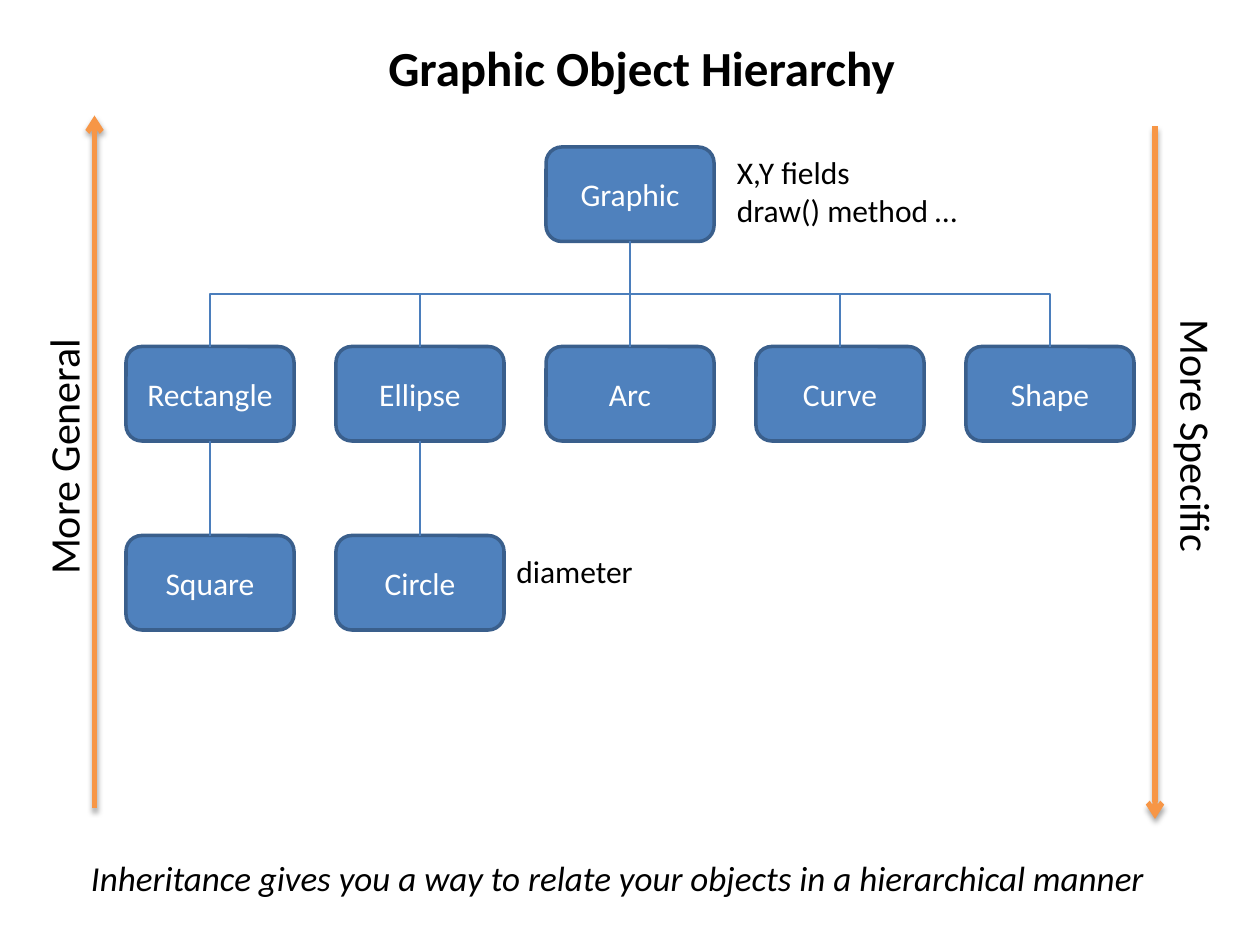
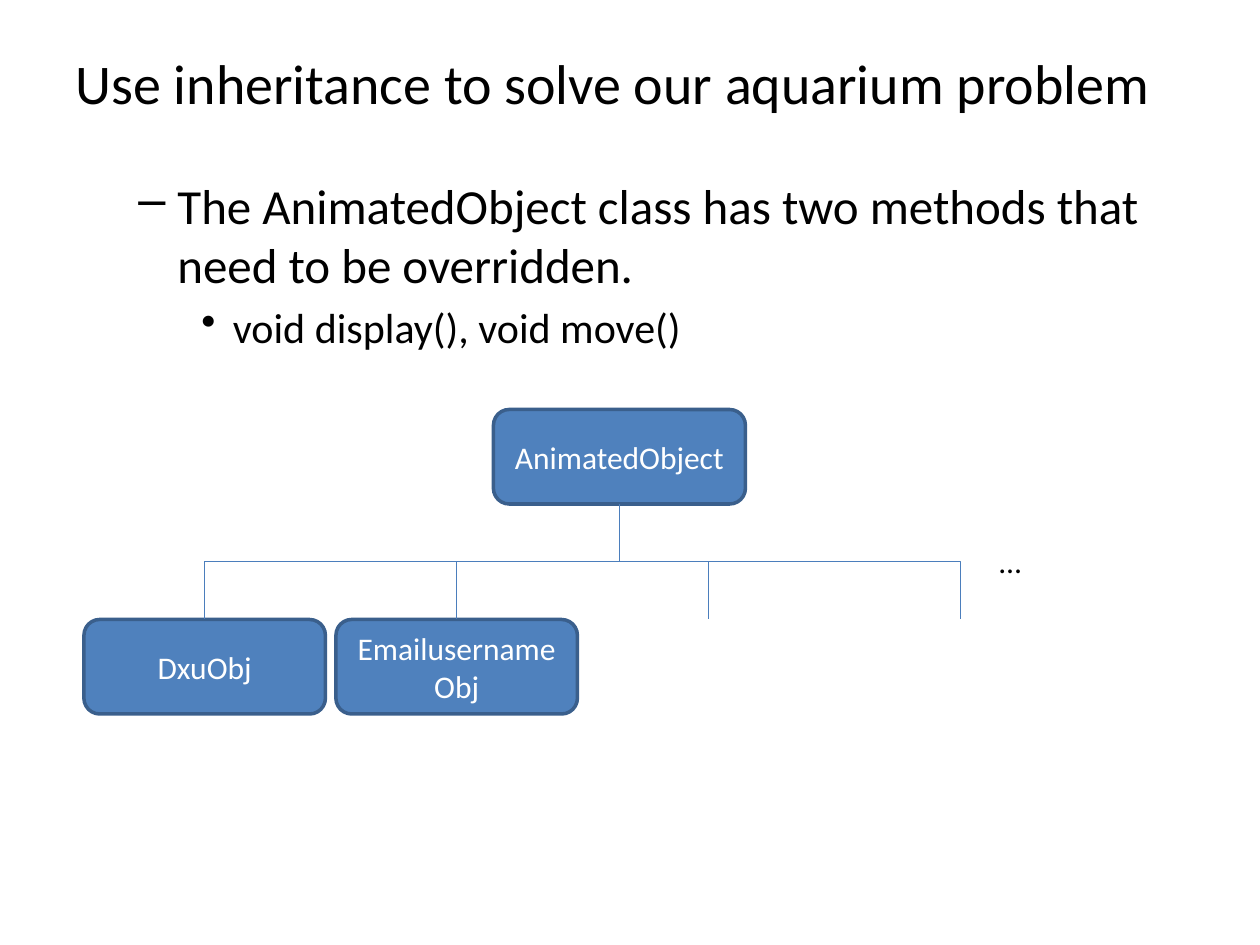
from pptx import Presentation
from pptx.dml.color import RGBColor
from pptx.enum.shapes import MSO_CONNECTOR as Link, MSO_SHAPE as Preset
from pptx.enum.text import MSO_ANCHOR as Anchor, MSO_AUTO_SIZE as Fit, PP_ALIGN as Align
from pptx.oxml.ns import qn
from pptx.util import Inches, Pt
from lxml.etree import SubElement

TITLE_ONLY = 5
COLS, ROWS = 120, 90  # twelve grid units to the inch
BOTTOM, TOP = 2, 0    # connection sites of a box


def rgb(code):
    return RGBColor.from_string(code)


def write(p, text, size=18, color="000000", bold=False, italic=False,
          align=Align.LEFT, font="Calibri"):
    """Add one formatted run to a paragraph."""
    p.alignment = align
    r = p.add_run()
    r.text = text
    r.font.name, r.font.size = font, Pt(size)
    r.font.bold, r.font.italic = bold, italic
    r.font.color.rgb = rgb(color)


class Deck:
    fill, edge, link, accent = "4F81BD", "3A5F8C", "4B7EBC", "F79646"

    def __init__(self):
        self.prs = Presentation()
        self.prs.slide_width, self.prs.slide_height = Inches(10), Inches(7.5)
        self.s = None

    def x(self, cols):
        return round(self.prs.slide_width * cols / COLS)

    def y(self, rows):
        return round(self.prs.slide_height * rows / ROWS)

    def area(self, col, row, width, height):
        return self.x(col), self.y(row), self.x(width), self.y(height)

    def slide(self, title, area, wrap=False, **fmt):
        self.s = self.prs.slides.add_slide(self.prs.slide_layouts[TITLE_ONLY])
        sp = self.s.shapes.title
        sp.left, sp.top, sp.width, sp.height = self.area(*area)
        tf = sp.text_frame
        tf.auto_size, tf.word_wrap = Fit.NONE, wrap
        tf.vertical_anchor = Anchor.TOP
        write(tf.paragraphs[0], title, **fmt)

    def text(self, lines, *area, rotation=0, **fmt):
        sp = self.s.shapes.add_textbox(*self.area(*area))
        sp.rotation = rotation
        tf = sp.text_frame
        tf.word_wrap = False
        for i, line in enumerate(lines):
            write(tf.add_paragraph() if i else tf.paragraphs[0], line, **fmt)

    def bullets(self, items, *area):
        """Items are (level, bullet, left margin, hanging indent, size, text)."""
        tf = self.s.shapes.add_textbox(*self.area(*area)).text_frame
        tf.word_wrap = True
        for i, (level, mark, margin, hang, size, text) in enumerate(items):
            p = tf.add_paragraph() if i else tf.paragraphs[0]
            p.level = level
            if i:
                p.space_before = Pt(size * 0.2)
            write(p, text, size=size)
            pPr = p._p.get_or_add_pPr()
            pPr.set("marL", str(Inches(margin)))
            pPr.set("indent", str(-Inches(hang)))
            SubElement(pPr, qn("a:buChar"), char=mark)

    def box(self, text, col, row, width=16, height=9):
        sp = self.s.shapes.add_shape(Preset.ROUNDED_RECTANGLE,
                                     *self.area(col, row, width, height))
        sp.shadow.inherit = False
        sp.fill.solid()
        sp.fill.fore_color.rgb = rgb(self.fill)
        sp.line.color.rgb, sp.line.width = rgb(self.edge), Pt(2)
        tf = sp.text_frame
        tf.word_wrap, tf.vertical_anchor = True, Anchor.MIDDLE
        write(tf.paragraphs[0], text, color="FFFFFF", align=Align.CENTER)
        return sp

    def line(self, kind, x1, y1, x2, y2, color, width):
        c = self.s.shapes.add_connector(kind, x1, y1, x2, y2)
        c.line.color.rgb, c.line.width = rgb(color), Pt(width)
        return c, SubElement(c._element.spPr, qn("a:effectLst"))

    def branch(self, parent, child=None, end=None):
        """Join a parent's bottom to a child's top, or to a free grid point."""
        x1, y1 = parent.left + parent.width // 2, parent.top + parent.height
        if child is not None:
            x2, y2 = child.left + child.width // 2, child.top
        else:
            x2, y2 = self.x(end[0]), self.y(end[1])
        dx, dy = x2 - x1, y2 - y1
        straight = abs(dx) < Pt(1)
        c, _ = self.line(Link.STRAIGHT if straight else Link.ELBOW,
                         x1, y1, x2, y2, self.link, 0.75)
        c.begin_connect(parent, BOTTOM)
        if child is not None:
            c.end_connect(child, TOP)
        if straight:
            return
        # Turn the elbow so that it leaves and arrives vertically
        c.width, c.height = dy, abs(dx)
        c.left = (x1 + x2 - dy) // 2
        c.top = (y1 + y2 - abs(dx)) // 2
        xfrm = c._element.spPr.find(qn("a:xfrm"))
        xfrm.set("rot", str((270 if dx > 0 else 90) * 60000))
        xfrm.set("flipH", "1" if dx > 0 else "0")
        xfrm.set("flipV", "0")

    def arrow(self, col, start, end):
        c, effects = self.line(Link.STRAIGHT, self.x(col), self.y(start),
                               self.x(col), self.y(end), self.accent, 3)
        SubElement(c.line._get_or_add_ln(), qn("a:tailEnd"), type="arrow")
        shadow = SubElement(effects, qn("a:outerShdw"), blurRad=str(Pt(3.1)),
                            dist=str(Pt(1.8)), dir="5400000", rotWithShape="0")
        color = SubElement(shadow, qn("a:srgbClr"), val="000000")
        SubElement(color, qn("a:alpha"), val="35000")


def hierarchy_slide(deck):
    deck.slide("Graphic Object Hierarchy", (35.5, 3, 51.2, 6.8),
               size=28, bold=True, align=Align.CENTER)

    # Class tree
    graphic = deck.box("Graphic", 52, 14)
    names = ["Rectangle", "Ellipse", "Arc", "Curve", "Shape"]
    kinds = [deck.box(name, 12 + 20 * i, 33) for i, name in enumerate(names)]
    special = [deck.box(name, 12 + 20 * i, 51)
               for i, name in enumerate(["Square", "Circle"])]
    for kind in kinds:
        deck.branch(graphic, kind)
    for kind, child in zip(kinds, special):
        deck.branch(kind, child)

    # Members beside the classes
    deck.text(["X,Y fields", "draw() method …"], 69, 14, 23.9, 8.5)
    deck.text(["diameter"], 48, 52, 13.7, 4.8)

    # Direction arrows and their labels
    deck.arrow(9, 77, 11)
    deck.arrow(110, 12, 78)
    for label, center, row, turn in [("More General", 6, 40.5, 270),
                                     ("More Specific", 114, 38.5, 90)]:
        deck.text([label], center - 12.5, row, 25, 6, rotation=turn,
                  size=24, align=Align.CENTER)

    # Closing remark
    deck.text(["Inheritance gives you a way to relate your objects in a hierarchical manner"],
              7, 81, 103.7, 5.3, size=20, italic=True, align=Align.CENTER)


def aquarium_slide(deck):
    deck.slide("Use inheritance to solve our aquarium problem", (6, 4, 111, 8),
               wrap=True, size=32)
    deck.bullets([
        (1, "–", 0.81, 0.31, 28,
         "The AnimatedObject class has two methods that need to be overridden."),
        (2, "•", 1.25, 0.25, 24, "void display(), void move()"),
    ], 6, 16.1, 111, 20)

    # Class tree with two places still open
    animated = deck.box("AnimatedObject", 47, 39, width=24)
    for i, name in enumerate(["DxuObj", "EmailusernameObj"]):
        deck.branch(animated, deck.box(name, 8 + 24 * i, 59, width=23))
    for i in (2, 3):
        deck.branch(animated, end=(19.5 + 24 * i, 59))
    deck.text(["…"], 94, 51, 4.6, 4.8)


def main():
    deck = Deck()
    hierarchy_slide(deck)
    aquarium_slide(deck)
    deck.prs.save("out.pptx")


if __name__ == "__main__":
    main()
